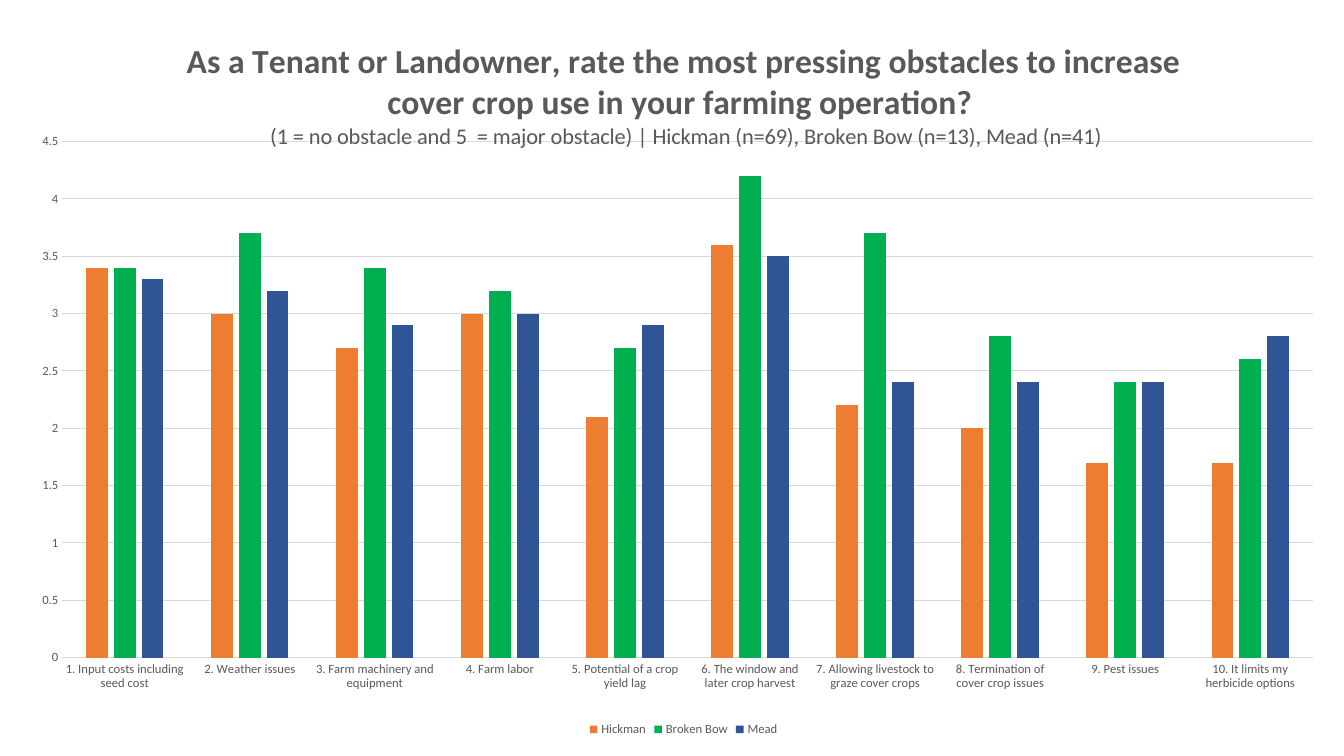
from lxml import etree
from pptx import Presentation
from pptx import util as u
from pptx.chart.data import CategoryChartData
from pptx.dml.color import RGBColor
from pptx.enum import chart as ch
from pptx.oxml.ns import qn

COLORS = {"text": "595959", "line": "D9D9D9", "Hickman": "ED7D31",
          "Broken Bow": "00B050", "Mead": "2F5597"}
TITLE = [
    ("As a Tenant or Landowner, rate the most pressing obstacles to increase "
     "cover crop use in your farming operation? ", 24, True),
    (" (1 = no obstacle and 5  = major obstacle) | "
     "Hickman (n=69), Broken Bow (n=13), Mead (n=41)", 16, False),
]
OBSTACLES = [
    "1. Input costs including seed cost",
    "2. Weather issues",
    "3. Farm machinery and equipment",
    "4. Farm labor",
    "5. Potential of a crop yield lag",
    "6. The window and later crop harvest",
    "7. Allowing livestock to graze cover crops",
    "8. Termination of cover crop issues",
    "9. Pest issues",
    "10. It limits my herbicide options",
]
RATINGS = {
    "Hickman": [3.4, 3, 2.7, 3, 2.1, 3.6, 2.2, 2, 1.7, 1.7],
    "Broken Bow": [3.4, 3.7, 3.4, 3.2, 2.7, 4.2, 3.7, 2.8, 2.4, 2.6],
    "Mead": [3.3, 3.2, 2.9, 3, 2.9, 3.5, 2.4, 2.4, 2.4, 2.8],
}
CHART_BOX = (0.32, 0.17, 12.92, 7.18)
PLOT_SHARES = {"x": 0.023, "y": 0.172, "w": 0.96, "h": 0.713}


def rgb(name):
    return RGBColor.from_string(COLORS[name])


def style_font(font, size, bold=False):
    font.name, font.size, font.bold = "Calibri", u.Pt(size), bold
    font.color.rgb = rgb("text")


def style_line(line):
    line.width = u.Pt(0.75)
    line.color.rgb = rgb("line")


def add_title(chart):
    frame = chart.chart_title.text_frame
    for index, (words, size, bold) in enumerate(TITLE):
        para = frame.add_paragraph() if index else frame.paragraphs[0]
        para.text = words
        style_font(para.runs[0].font, size, bold)


def place_plot(chart):
    """Fix the inner plot area at shares of the chart's size."""
    area = chart.element.xpath("c:chart/c:plotArea")[0]
    for old in area.findall(qn("c:layout")):
        area.remove(old)
    layout = etree.Element(qn("c:layout"))
    area.insert(0, layout)
    manual = etree.SubElement(layout, qn("c:manualLayout"))
    settings = {"layoutTarget": "inner", "xMode": "edge", "yMode": "edge",
                **PLOT_SHARES}
    for tag, value in settings.items():
        etree.SubElement(manual, qn(f"c:{tag}")).set("val", str(value))


def style_axes(chart):
    for axis in (chart.category_axis, chart.value_axis):
        axis.major_tick_mark = axis.minor_tick_mark = ch.XL_TICK_MARK.NONE
        style_font(axis.tick_labels.font, 9)
    style_line(chart.category_axis.format.line)
    values = chart.value_axis
    values.minimum_scale, values.maximum_scale, values.major_unit = 0, 4.5, 0.5
    values.format.line.fill.background()
    values.has_major_gridlines = True
    style_line(values.major_gridlines.format.line)


def main():
    deck = Presentation()
    deck.slide_width, deck.slide_height = u.Inches(13.33), u.Inches(7.5)
    page = deck.slides.add_slide(deck.slide_layouts[6])

    data = CategoryChartData()
    data.categories = OBSTACLES
    for place, ratings in RATINGS.items():
        data.add_series(place, ratings)
    chart = page.shapes.add_chart(ch.XL_CHART_TYPE.COLUMN_CLUSTERED,
                                  *map(u.Inches, CHART_BOX), data).chart
    style_font(chart.font, 10)
    add_title(chart)
    place_plot(chart)
    style_axes(chart)

    plot = chart.plots[0]
    plot.gap_width, plot.overlap, plot.vary_by_categories = 219, -27, False
    for series in plot.series:
        series.format.fill.solid()
        series.format.fill.fore_color.rgb = rgb(series.name)

    chart.has_legend = True
    chart.legend.position = ch.XL_LEGEND_POSITION.BOTTOM
    chart.legend.include_in_layout = False
    style_font(chart.legend.font, 9)
    deck.save("out.pptx")


if __name__ == "__main__":
    main()
